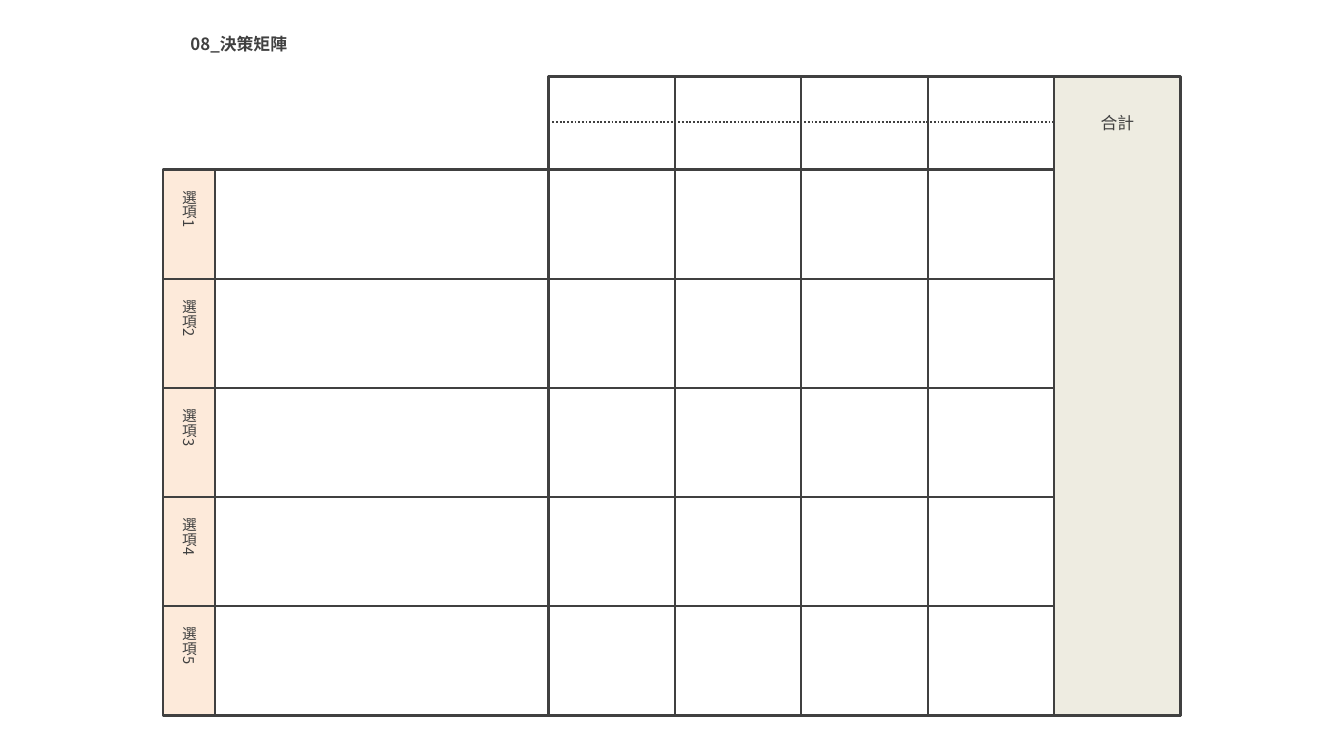
import pptx
import pptx.util
from dataclasses import dataclass
from lxml import etree
from pptx.dml.color import RGBColor
from pptx.enum.dml import MSO_LINE
from pptx.enum.shapes import MSO_CONNECTOR, MSO_SHAPE
from pptx.enum.text import MSO_ANCHOR, MSO_AUTO_SIZE, PP_ALIGN
from pptx.oxml.ns import qn

Pt = pptx.util.Pt


@dataclass(frozen=True)
class Theme:
    ink: RGBColor = RGBColor(0x40, 0x40, 0x40)
    peach: RGBColor = RGBColor(0xFD, 0xEA, 0xDA)
    sand: RGBColor = RGBColor(0xEE, 0xEC, 0xE1)
    font: str = "Noto Sans CJK JP"
    text: float = 9
    label: float = 7.9
    thin: float = 1
    thick: float = 1.5


THEME = Theme()


def add_rect(slide, box, fill=None):
    """Draw a plain filled box, or a thick open frame when no fill is given."""
    rect = slide.shapes.add_shape(MSO_SHAPE.RECTANGLE, *map(Pt, box))
    rect.shadow.inherit = False
    if fill is None:
        rect.fill.background()
        rect.line.color.rgb = THEME.ink
        rect.line.width = Pt(THEME.thick)
    else:
        rect.fill.solid()
        rect.fill.fore_color.rgb = fill
        rect.line.fill.background()


def add_line(slide, x1, y1, x2, y2, dash=None):
    line = slide.shapes.add_connector(
        MSO_CONNECTOR.STRAIGHT, Pt(x1), Pt(y1), Pt(x2), Pt(y2))
    line.line.color.rgb = THEME.ink
    line.line.width = Pt(THEME.thin)
    if dash is not None:
        line.line.dash_style = dash
    etree.SubElement(line._element.spPr, qn("a:effectLst"))


def add_text(slide, box, text, size, bold=False, wrap=True, upright=False):
    """Wrapped text is centred both ways; upright text runs downwards."""
    shape = slide.shapes.add_textbox(*map(Pt, box))
    frame = shape.text_frame
    frame.text = text
    frame.word_wrap = wrap
    frame.auto_size = MSO_AUTO_SIZE.SHAPE_TO_FIT_TEXT
    para = frame.paragraphs[0]
    if wrap:
        frame.vertical_anchor = MSO_ANCHOR.MIDDLE
        para.alignment = PP_ALIGN.CENTER
    if upright:
        frame._txBody.bodyPr.set("vert", "eaVert")
    run = para.runs[0]
    font = run.font
    font.name = THEME.font
    font.size = Pt(THEME.size if size is None else size)
    font.bold = bold
    font.color.rgb = THEME.ink
    east = etree.SubElement(run._r.get_or_add_rPr(), qn("a:ea"))
    east.set("typeface", THEME.font)


def add_scores(slide, box, head, cols):
    """Criteria columns, the last of them the total, under a split header."""
    left, top, width, height = box
    step = width / cols
    total = left + step * (cols - 1)
    add_rect(slide, (total, top, step, height), THEME.sand)
    add_line(slide, left, top + 24.2, total, top + 24.2, MSO_LINE.ROUND_DOT)
    for col in range(1, cols):
        x = left + col * step
        add_line(slide, x, top, x, top + height)
    add_text(slide, (total, top + head / 2 - 9, step, 18), "合計", THEME.text)
    add_rect(slide, box)


def add_options(slide, box, stub, rows):
    """Option rows with upright labels in a tinted stub column."""
    left, top, width, height = box
    step = height / rows
    add_rect(slide, (left, top, stub, height), THEME.peach)
    for row in range(rows):
        y = top + row * step
        if row:
            add_line(slide, left, y, left + width, y)
        add_text(slide, (left + 0.6, y + 3.9, 26.8, 51), f"選項{row + 1}",
                 THEME.label, upright=True)
    add_line(slide, left + stub, top, left + stub, top + height)
    add_rect(slide, box)


def main():
    deck = pptx.Presentation()
    deck.slide_width, deck.slide_height = Pt(720), Pt(405)
    slide = deck.slides.add_slide(deck.slide_layouts[6])
    left, mid, right = 87.3, 293.9, 632.5
    top, head, base = 41, 49.9, 383.3
    body = top + head
    add_text(slide, (95, 14.4, 69, 18), "08_決策矩陣", THEME.text,
             bold=True, wrap=False)
    add_options(slide, (left, body, right - left, base - body), 27.9, 5)
    add_scores(slide, (mid, top, right - mid, base - top), head, 5)
    deck.save("out.pptx")


if __name__ == "__main__":
    main()
